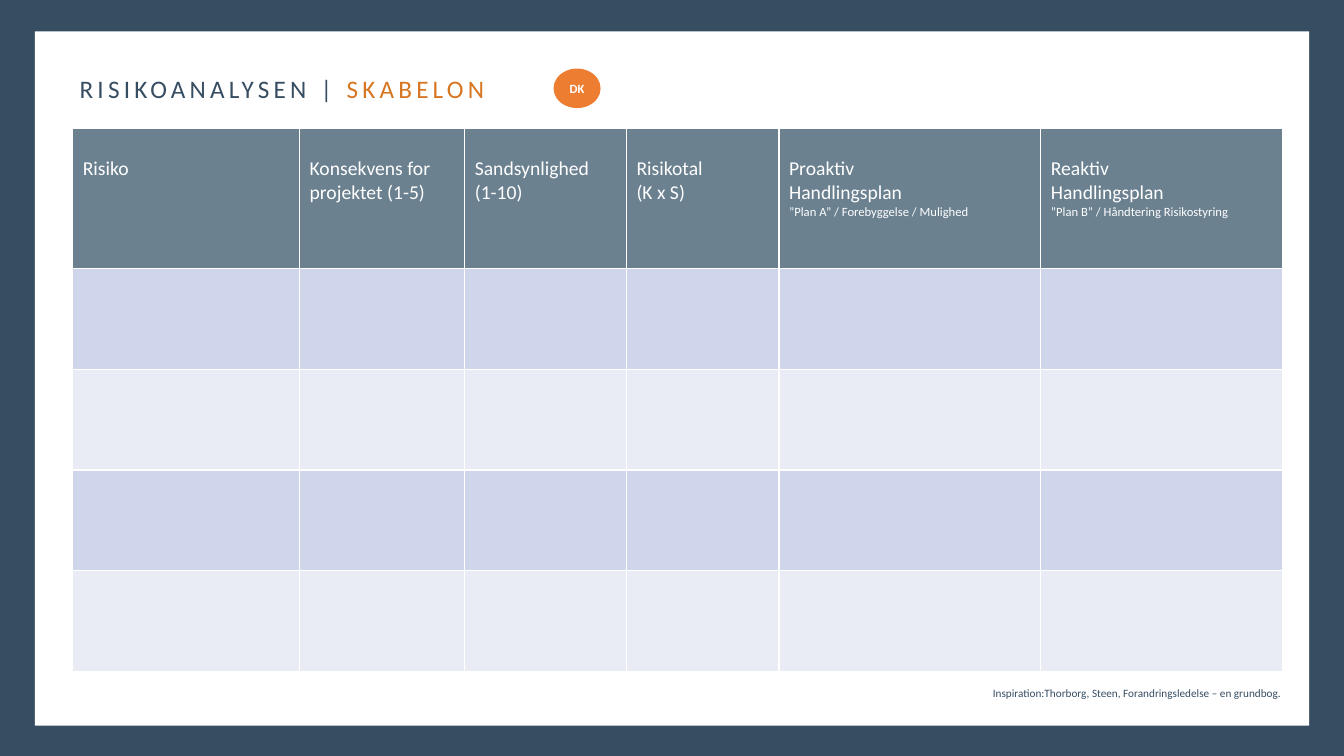
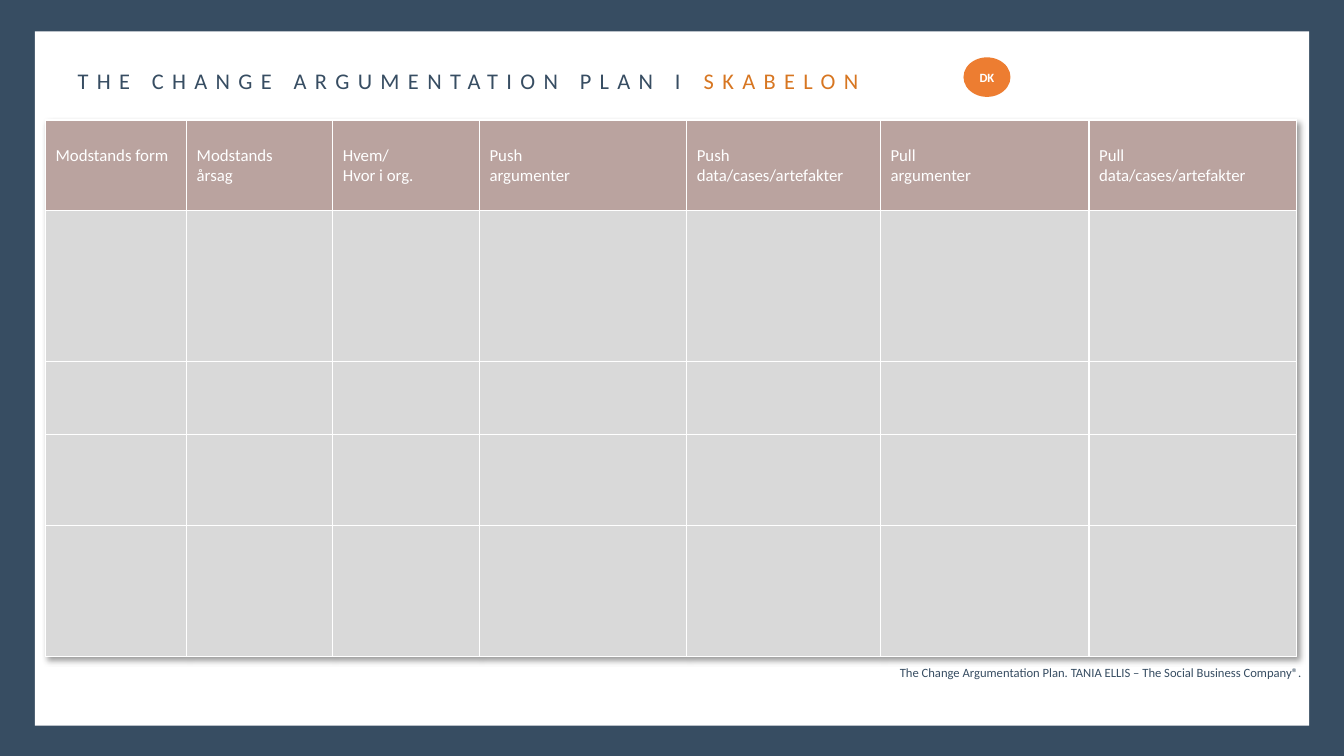
import pptx
import pptx.dml.color
import pptx.enum.shapes
import pptx.enum.text
import pptx.oxml
import pptx.oxml.ns
import pptx.util
from lxml import etree

Pt = pptx.util.Pt
RGBColor = pptx.dml.color.RGBColor
PP_ALIGN = pptx.enum.text.PP_ALIGN
MSO_ANCHOR = pptx.enum.text.MSO_ANCHOR
MSO_SHAPE = pptx.enum.shapes.MSO_SHAPE

NAVY = RGBColor(0x37, 0x4D, 0x62)
WHITE = RGBColor(0xFF, 0xFF, 0xFF)
RUST = RGBColor(0xD7, 0x76, 0x21)
ORANGE = RGBColor(0xED, 0x7D, 0x31)
SLATE = RGBColor(0x6B, 0x81, 0x90)
ROSE = RGBColor(0xBA, 0xA3, 0x9F)
LAVENDER = RGBColor(0xCF, 0xD5, 0xEA)
PALE_LAVENDER = RGBColor(0xE9, 0xEB, 0xF5)
GREY = RGBColor(0xD9, 0xD9, 0xD9)

FONT = "Calibri"
TITLE_ONLY = 5
DRAWING = pptx.oxml.ns.nsdecls("a")

RISK_HEADERS = [
    ["Risiko"],
    ["Konsekvens for projektet (1-5)"],
    ["Sandsynlighed", "(1-10)"],
    ["Risikotal", "(K x S)"],
    ["Proaktiv", "Handlingsplan", "”Plan A” / Forebyggelse / Mulighed"],
    ["Reaktiv", "Handlingsplan", "”Plan B” / Håndtering Risikostyring"],
]
ARGUMENT_HEADERS = [
    ["Modstands form"],
    ["Modstands", "årsag"],
    ["Hvem/", "Hvor i org."],
    ["Push", "argumenter"],
    ["Push", "data/cases/artefakter"],
    ["Pull", "argumenter"],
    ["Pull", "data/cases/artefakter"],
]


def add_run(paragraph, text, size, color, bold=False):
    run = paragraph.add_run()
    run.text = text
    run.font.name = FONT
    run.font.size = Pt(size)
    run.font.bold = bold
    run.font.color.rgb = color
    return run


def place(shape, left, top, width, height):
    shape.left, shape.top = Pt(left), Pt(top)
    shape.width, shape.height = Pt(width), Pt(height)


def add_plain_shape(slide, kind, box, color):
    shape = slide.shapes.add_shape(kind, *map(Pt, box))
    shape.shadow.inherit = False
    shape.fill.solid()
    shape.fill.fore_color.rgb = color
    shape.line.fill.background()
    return shape


def style_layout(presentation, layout, slide):
    """Give the master its navy ground and the layout its white panel."""
    ground = presentation.slide_master.background.fill
    ground.solid()
    ground.fore_color.rgb = NAVY
    panel = add_plain_shape(slide, MSO_SHAPE.RECTANGLE, (25, 22.4, 910.2, 496), WHITE)
    layout.shapes.element.insert(2, panel.element)


def set_title(slide, text, box, size, spacing):
    """Write the title with its last word in rust and letters spaced in points."""
    title = slide.shapes.title
    place(title, *box)
    frame = title.text_frame
    frame.auto_size = pptx.enum.text.MSO_AUTO_SIZE.NONE
    frame.vertical_anchor = MSO_ANCHOR.TOP
    paragraph = frame.paragraphs[0]
    paragraph.alignment = PP_ALIGN.LEFT
    for part, color in ((text, NAVY), ("SKABELON", RUST)):
        run = add_run(paragraph, part, size, color)
        run.font._element.set("spc", str(spacing * 100))


def add_language_badge(slide, left, top):
    badge = add_plain_shape(slide, MSO_SHAPE.OVAL, (left, top, 33.6, 28.2), ORANGE)
    frame = badge.text_frame
    frame.margin_left = frame.margin_right = frame.margin_top = frame.margin_bottom = 0
    frame.vertical_anchor = MSO_ANCHOR.MIDDLE
    paragraph = frame.paragraphs[0]
    paragraph.alignment = PP_ALIGN.CENTER
    add_run(paragraph, "DK", 9, WHITE, bold=True)


def add_source_line(slide, text, box, size):
    frame = slide.shapes.add_textbox(*map(Pt, box)).text_frame
    frame.word_wrap = True
    paragraph = frame.paragraphs[0]
    paragraph.alignment = PP_ALIGN.RIGHT
    add_run(paragraph, text, size, NAVY)


def style_cell(cell, fill):
    """Draw white one-point borders around a filled cell."""
    properties = cell._tc.get_or_add_tcPr()
    for side in "LRTB":
        properties.append(pptx.oxml.parse_xml(
            f'<a:ln{side} {DRAWING} w="{Pt(1)}"><a:solidFill>'
            f'<a:srgbClr val="{WHITE}"/></a:solidFill></a:ln{side}>'))
    cell.fill.solid()
    cell.fill.fore_color.rgb = fill


def write_header(cell, lines, size):
    """Fill a header cell one line down; a third line is a small note."""
    cell.margin_top = Pt(3.6 + 1.22 * size)
    frame = cell.text_frame
    for index, line in enumerate(lines):
        paragraph = frame.add_paragraph() if index else frame.paragraphs[0]
        add_run(paragraph, line, 9 if index == 2 else size, WHITE)


def add_form(slide, left, top, widths, heights, headers, size, header_fill, row_fills):
    """Add an empty form: a header row over rows that cycle through row_fills."""
    table = slide.shapes.add_table(
        len(heights), len(widths), Pt(left), Pt(top),
        Pt(sum(widths)), Pt(sum(heights))).table
    for column, width in zip(table.columns, widths):
        column.width = Pt(width)
    for index, (row, height) in enumerate(zip(table.rows, heights)):
        row.height = Pt(height)
        fill = row_fills[(index - 1) % len(row_fills)] if index else header_fill
        for cell in row.cells:
            style_cell(cell, fill)
    for cell, lines in zip(table.rows[0].cells, headers):
        write_header(cell, lines, size)
    return table


def add_table_shadow(table):
    properties = table._tbl.tblPr
    effects = etree.fromstring(
        f'<a:effectLst {DRAWING}><a:outerShdw blurRad="{Pt(4)}" dist="{Pt(3)}" '
        'dir="2700000" algn="tl" rotWithShape="0"><a:srgbClr val="000000">'
        '<a:alpha val="40000"/></a:srgbClr></a:outerShdw></a:effectLst>')
    properties.insert(0, effects)


def build_risk_slide(slide):
    add_form(slide, 52, 91.4, [162, 118, 115.5, 109, 187, 173], [100.4] + [72] * 4,
             RISK_HEADERS, 14, SLATE, [LAVENDER, PALE_LAVENDER])
    set_title(slide, "RISIKOANALYSEN | ", (49.7, 49, 528.5, 29), 18, 3)
    add_source_line(slide, "Inspiration:Thorborg, Steen, Forandringsledelse – en grundbog.",
                    (682, 486.7, 240.5, 17), 8)
    add_language_badge(slide, 395.4, 49)


def build_argument_slide(slide):
    table = add_form(slide, 32.5, 85.7, [100.8, 104.4, 104.8, 148, 138.4, 149, 148],
                     [64.6, 107.8, 52.2, 65, 93.6], ARGUMENT_HEADERS, 12, ROSE, [GREY])
    add_table_shadow(table)
    add_source_line(
        slide, "The Change Argumentation Plan. TANIA ELLIS – The Social Business Company®.",
        (387.5, 471.6, 549, 18), 9)
    set_title(slide, "THE CHANGE ARGUMENTATION PLAN I ", (48.2, 44, 791, 26.6), 16, 6)
    add_language_badge(slide, 688.2, 41)


def main():
    presentation = pptx.Presentation()
    presentation.slide_width, presentation.slide_height = Pt(960), Pt(540)
    layout = presentation.slide_layouts[TITLE_ONLY]
    risk_slide = presentation.slides.add_slide(layout)
    style_layout(presentation, layout, risk_slide)
    build_risk_slide(risk_slide)
    build_argument_slide(presentation.slides.add_slide(layout))
    presentation.save("out.pptx")


if __name__ == "__main__":
    main()
